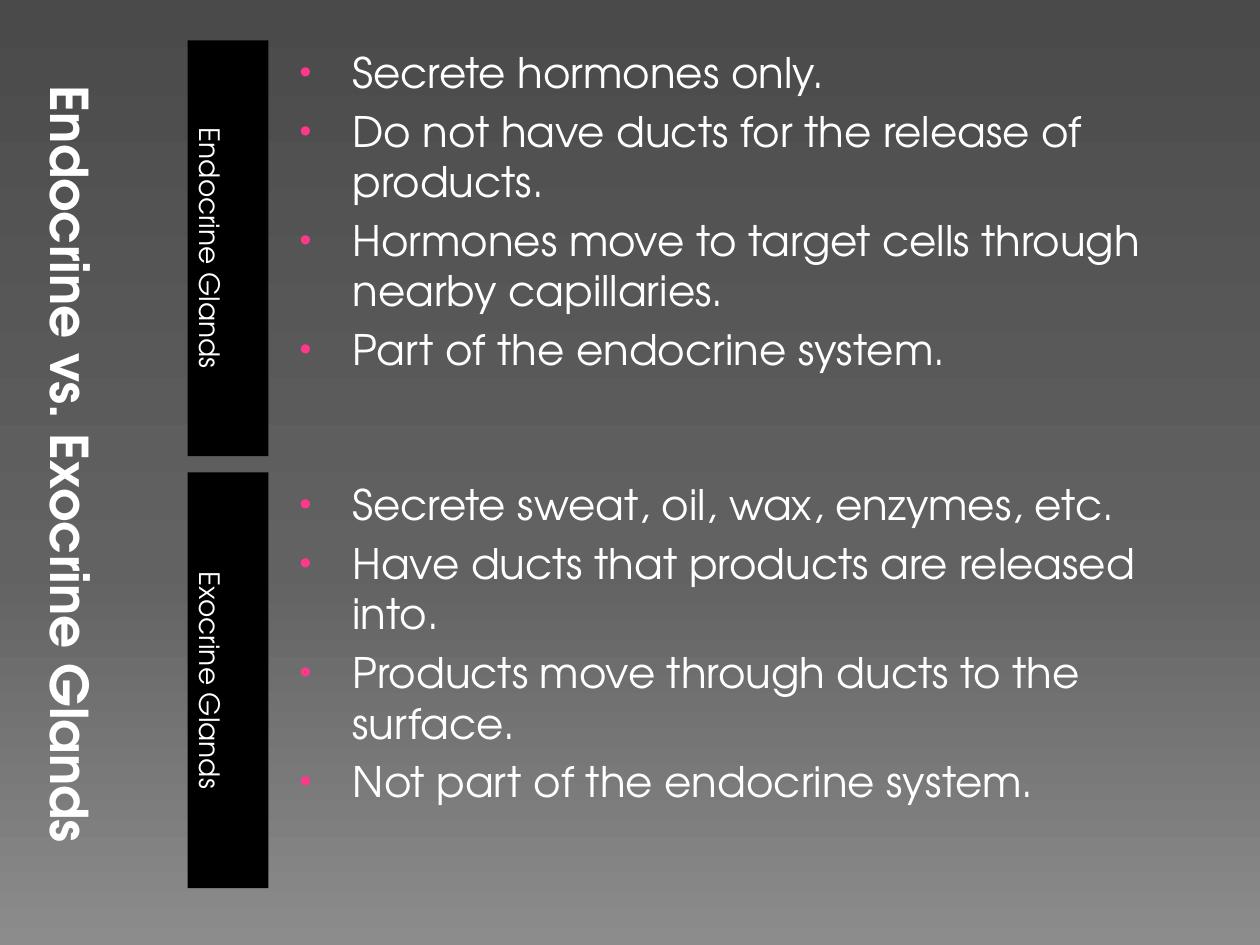
import pptx
import pptx.dml.color
import pptx.enum.shapes
import pptx.enum.text
import pptx.oxml
import pptx.oxml.ns
import pptx.util
from pptx.util import Inches

COLOURS = {"text": "FFFFFF", "label": "000000", "bullet": "FF388C"}
BACKGROUND = [(0, "4A4A4A"), (60, "626262"), (100, "8C8C8C")]
FONT = "TeX Gyre Adventor"

TITLE = "Endocrine vs. Exocrine Glands"
GLANDS = [
    ("Endocrine Glands", [
        "Secrete hormones only.",
        "Do not have ducts for the release of products.",
        "Hormones move to target cells through nearby capillaries.",
        "Part of the endocrine system.",
    ]),
    ("Exocrine Glands", [
        "Secrete sweat, oil, wax, enzymes, etc.",
        "Have ducts that products are released into.",
        "Products move through ducts to the surface.",
        "Not part of the endocrine system.",
    ]),
]


def add_xml(parent, xml):
    """Append one DrawingML element, given without its namespace declaration."""
    namespace = pptx.oxml.ns.nsdecls("a")
    tag, rest = xml.split(" ", 1)
    parent.append(pptx.oxml.parse_xml(f"{tag} {namespace} {rest}"))


def style_span(span, size, bold=False):
    span.font.name = FONT
    span.font.size = pptx.util.Pt(size)
    span.font.bold = bold
    span.font.color.rgb = pptx.dml.color.RGBColor.from_string(COLOURS["text"])


def fill_background(page):
    fill = page.background.fill
    fill.gradient()
    fill.gradient_angle = 270
    stops = page.background._cSld.find(".//" + pptx.oxml.ns.qn("a:gsLst"))
    for stop in list(stops):
        stops.remove(stop)
    for position, colour in BACKGROUND:
        add_xml(stops, f'<a:gs pos="{position * 1000}"><a:srgbClr val="{colour}"/></a:gs>')


def set_vertical_text(box, text, size, bold=False):
    """Centred text that reads downwards along the left side of its box."""
    frame = box.text_frame
    frame.text = text
    frame.word_wrap = True
    frame.margin_left = frame.margin_right = Inches(0.1)
    frame.margin_top = frame.margin_bottom = Inches(0.05)
    frame.vertical_anchor = pptx.enum.text.MSO_ANCHOR.BOTTOM
    frame._txBody.bodyPr.set("vert", "vert")
    paragraph = frame.paragraphs[0]
    paragraph.alignment = pptx.enum.text.PP_ALIGN.CENTER
    style_span(paragraph.runs[0], size, bold)


def add_title(page, left, top, width, height):
    box = page.shapes.add_textbox(left, top, width, height)
    set_vertical_text(box, TITLE, 29.7, bold=True)


def add_label(page, text, left, top, width, height):
    box = page.shapes.add_shape(
        pptx.enum.shapes.MSO_SHAPE.RECTANGLE, left, top, width, height)
    box.shadow.inherit = False
    box.fill.solid()
    box.fill.fore_color.rgb = pptx.dml.color.RGBColor.from_string(COLOURS["label"])
    box.line.fill.background()
    set_vertical_text(box, text, 16)


def add_bullets(page, lines, left, top, width, height):
    box = page.shapes.add_textbox(left, top, width, height)
    frame = box.text_frame
    frame.word_wrap = True
    frame.text = "\n".join(lines)
    for paragraph in frame.paragraphs:
        style_span(paragraph.runs[0], 24)
        properties = paragraph._p.get_or_add_pPr()
        properties.set("marL", str(Inches(0.49)))
        properties.set("indent", str(Inches(-0.42)))
        add_xml(properties, '<a:spcBef ><a:spcPct val="20000"/></a:spcBef>')
        add_xml(properties, f'<a:buClr ><a:srgbClr val="{COLOURS["bullet"]}"/></a:buClr>')
        add_xml(properties, '<a:buSzPct val="80000"/>')
        add_xml(properties, '<a:buFont typeface="Arial"/>')
        add_xml(properties, '<a:buChar char="•"/>')


def add_gland(page, label, lines, left, top, width, height):
    """A black label with its bullet list on the right."""
    label_width, gap = Inches(0.64), Inches(0.08)
    add_label(page, label, left, top, label_width, height)
    offset = label_width + gap
    add_bullets(page, lines, left + offset, top, width - offset, height)


def main():
    deck = pptx.Presentation()
    deck.slide_width, deck.slide_height = Inches(10), Inches(7.5)
    page = deck.slides.add_slide(deck.slide_layouts[6])
    fill_background(page)

    top, row_height, row_gap = Inches(0.32), Inches(3.3), Inches(0.13)
    add_title(page, Inches(0.27), top, Inches(1.17), 2 * row_height + row_gap)
    for row, (label, lines) in enumerate(GLANDS):
        add_gland(page, label, lines, Inches(1.49),
                  top + row * (row_height + row_gap), Inches(8.22), row_height)

    deck.save("out.pptx")


if __name__ == "__main__":
    main()
